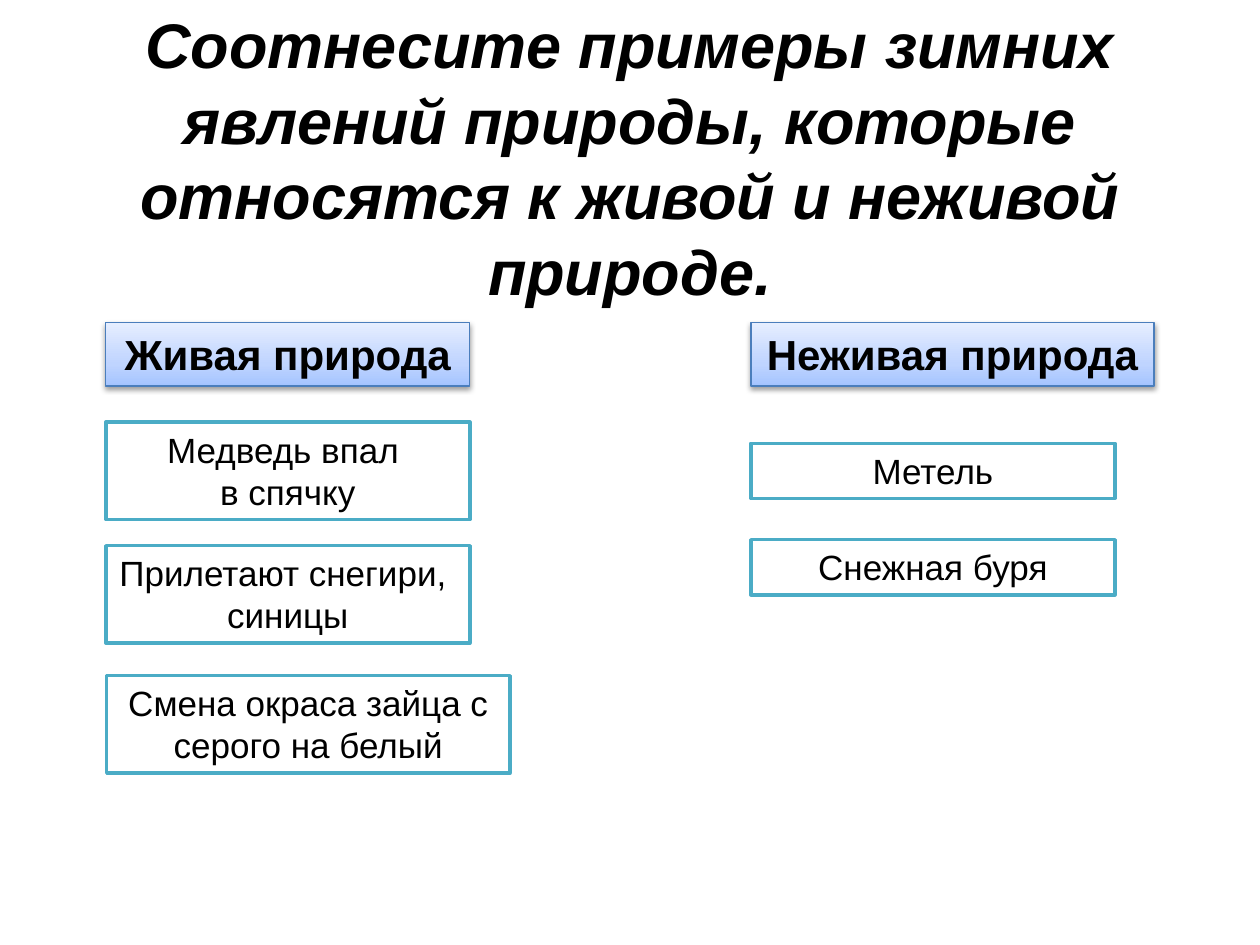
from lxml import etree
from pptx import Presentation
from pptx.dml.color import RGBColor
from pptx.enum import shapes, text
from pptx.oxml import ns
from pptx.util import Pt

FONT = "Arial"
BLACK = "000000"
LEFT, RIGHT = 60.5, 429.1
NARROW, WIDE = 208, 230.4
HEADER_TOP, HEADER_HEIGHT = 184.3, 36.4
ONE_LINE, TWO_LINES = 31.5, 55.7
HEADER_STOPS = [(0, "A4C4FF"), (35, "BFD4FF"), (100, "E6EEFF")]
CARDS = [
    (LEFT, 241.2, NARROW, TWO_LINES, "Медведь впал \nв спячку"),
    (LEFT, 311.8, NARROW, TWO_LINES, "Прилетают снегири, \nсиницы"),
    (LEFT + 0.5, 386.1, WIDE, TWO_LINES, "Смена окраса зайца с серого на белый"),
    (RIGHT, 253.3, NARROW, ONE_LINE, "Метель"),
    (RIGHT, 308.4, NARROW, ONE_LINE, "Снежная буря"),
]


def color(value):
    return RGBColor.from_string(value)


def add_child(parent, tag, **attributes):
    child = etree.SubElement(parent, ns.qn(tag))
    for name, value in attributes.items():
        child.set(name, str(value))
    return child


def write(box, words, size, bold=False, italic=False):
    frame = box.text_frame
    frame.text = words
    frame.word_wrap = True
    frame.vertical_anchor = text.MSO_ANCHOR.TOP
    for para in frame.paragraphs:
        para.alignment = text.PP_ALIGN.CENTER
        for span in para.runs:
            font = span.font
            font.name, font.size = FONT, Pt(size)
            font.bold, font.italic = bold, italic
            font.color.rgb = color(BLACK)


def add_title(page, words):
    box = page.shapes.add_textbox(Pt(0), Pt(44.6), Pt(720), Pt(90))
    write(box, words, 36, bold=True, italic=True)
    box.text_frame.vertical_anchor = text.MSO_ANCHOR.MIDDLE
    box.text_frame.paragraphs[0].line_spacing = Pt(43.2)


def add_box(page, left, top, width, height, line, weight):
    box = page.shapes.add_shape(
        shapes.MSO_SHAPE.RECTANGLE, Pt(left), Pt(top), Pt(width), Pt(height))
    box.shadow.inherit = False
    box.line.color.rgb = color(line)
    box.line.width = Pt(weight)
    return box


def add_gradient(box, stops):
    box.fill.gradient()
    box.fill.gradient_angle = 90
    stop_list = box.element.spPr.find(".//" + ns.qn("a:gsLst"))
    for old_stop in list(stop_list):
        stop_list.remove(old_stop)
    for position, value in stops:
        stop = add_child(stop_list, "a:gs", pos=position * 1000)
        add_child(stop, "a:srgbClr", val=value)


def add_shadow(box):
    effects = box.element.spPr.find(ns.qn("a:effectLst"))
    shadow = add_child(effects, "a:outerShdw", blurRad=Pt(3.1), dist=Pt(1.6),
                       dir=90 * 60000, rotWithShape=0)
    tint = add_child(shadow, "a:srgbClr", val=BLACK)
    add_child(tint, "a:alpha", val=38000)


def add_header(page, left, width, words):
    box = add_box(page, left, HEADER_TOP, width, HEADER_HEIGHT, "4B7EBC", 0.75)
    add_gradient(box, HEADER_STOPS)
    add_shadow(box)
    write(box, words, 24, bold=True)


def add_card(page, left, top, width, height, words):
    box = add_box(page, left, top, width, height, "4BACC6", 2)
    box.fill.solid()
    box.fill.fore_color.rgb = color("FFFFFF")
    write(box, words, 20)


def main():
    deck = Presentation()
    deck.slide_width, deck.slide_height = Pt(720), Pt(540)
    page = deck.slides.add_slide(deck.slide_layouts[6])
    add_title(page, "Соотнесите примеры зимних явлений природы, "
                    "которые относятся к живой и неживой природе.")
    add_header(page, LEFT, NARROW, "Живая природа")
    add_header(page, RIGHT, WIDE, "Неживая природа")
    for card in CARDS:
        add_card(page, *card)
    deck.save("out.pptx")


if __name__ == "__main__":
    main()
